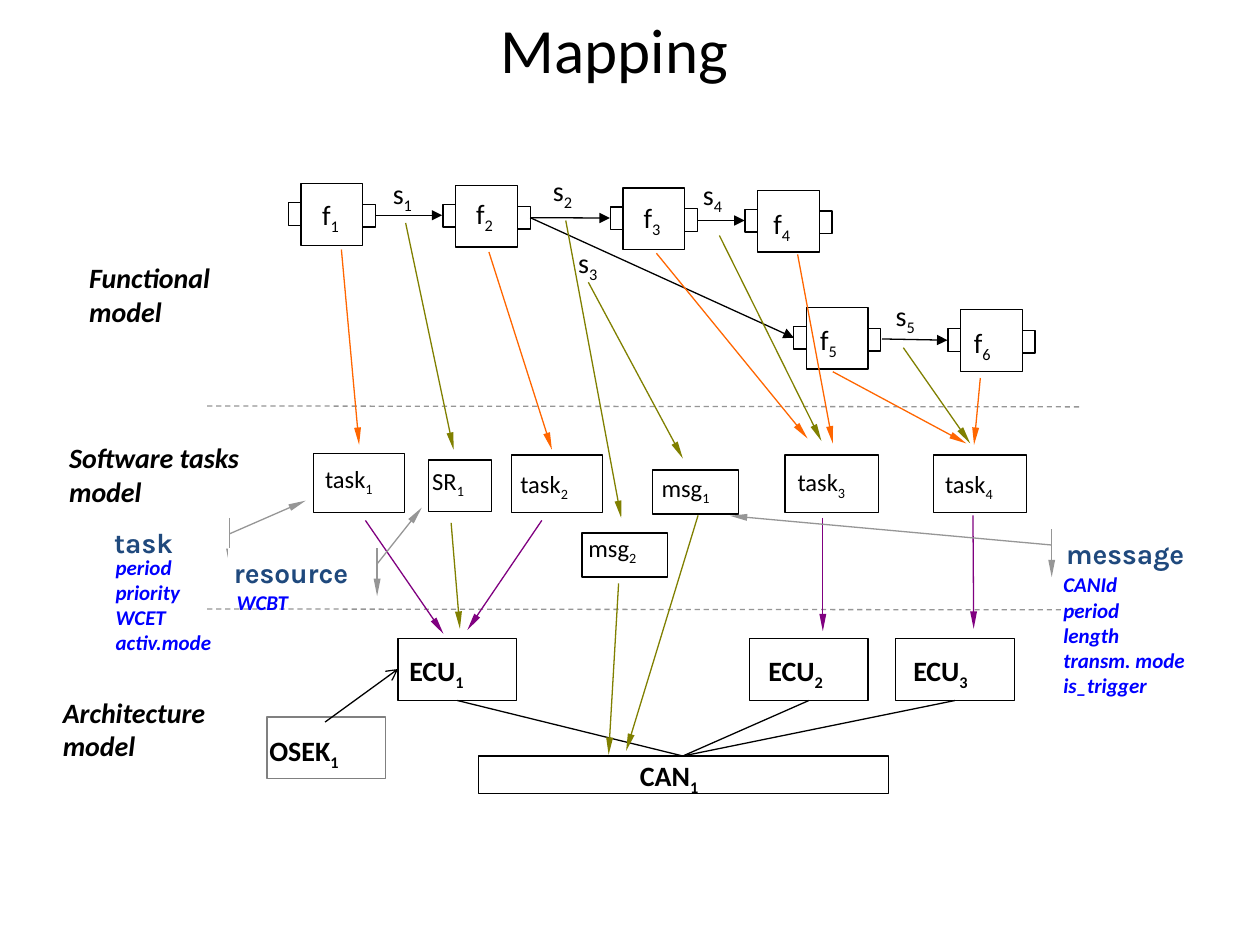
import dataclasses
import typing

import pptx
import pptx.dml.color
import pptx.enum.dml
import pptx.enum.shapes
import pptx.enum.text
import pptx.oxml
import pptx.oxml.ns
import pptx.util

Pt = pptx.util.Pt
Point = tuple[float, float]


class TextStyle(typing.NamedTuple):
    size: float
    color: str = "000000"
    bold: bool = False
    italic: bool = False
    font: str = "Calibri"


@dataclasses.dataclass(frozen=True)
class Theme:
    ink: str = "000000"
    paper: str = "FFFFFF"
    grey: str = "969696"
    os_line: str = "808080"
    function_map: str = "FF6600"
    signal_map: str = "808000"
    task_map: str = "800080"
    stroke: float = 0.75
    title: TextStyle = TextStyle(36)
    function: TextStyle = TextStyle(16)
    task: TextStyle = TextStyle(14)
    unit: TextStyle = TextStyle(16, bold=True)
    layer: TextStyle = TextStyle(16, bold=True, italic=True)
    callout: TextStyle = TextStyle(16, "1F497D", bold=True, font="Karla")
    attribute: TextStyle = TextStyle(12, "0000FF", bold=True, italic=True)


THEME = Theme()
ROOMY = (7.2, 3.6, 7.2, 3.6)
TIGHT = (1.44, 0.72, 1.44, 0.72)


class Node(typing.NamedTuple):
    name: str
    index: str
    left: float
    top: float
    width: float
    height: float
    label: Point
    color: str = THEME.ink


class Signal(typing.NamedTuple):
    index: str
    label: Point
    start: Point
    end: Point


class Note(typing.NamedTuple):
    name: str
    corner: Point
    pointer: tuple[float, float, float, float]
    attributes: tuple[str, ...]
    frame: tuple[float, float, float, float]


BODY, PORT_WIDTH, PORT_HEIGHT = 35.2, 7.3, 13
FUNCTIONS = [Node("f", str(number), left, top, BODY, BODY, label)
             for number, (left, top, label) in enumerate([
                 (172, 105, (177, 109.5)), (260.5, 106, (265, 108.7)),
                 (356, 107.5, (360.7, 110.9)), (433, 108.8, (434.9, 114.5)),
                 (460.8, 175.7, (461.5, 180.7)), (549, 177, (549.4, 182.2))], 1)]
SIGNALS = [
    Signal("1", (217.4, 97.2), (214.6, 123), (252.7, 123)),
    Signal("2", (308.9, 95.8), (303, 124.4), (348.5, 124.6)),
    Signal("3", (323.3, 136.8), (303, 124.4), (453.6, 193)),
    Signal("4", (394.6, 97.9), (399, 126), (425.5, 126)),
    Signal("5", (504.7, 167), (504, 193.7), (541.4, 194.4)),
]
UNITS = [
    Node("ECU", "1", 227.5, 365, 67.7, 35.3, (226.8, 370)),
    Node("ECU", "2", 428.4, 365, 67.7, 35.3, (432, 370)),
    Node("ECU", "3", 511.9, 365, 67.7, 35.3, (514.8, 370)),
    Node("OSEK", "1", 152.6, 409.7, 67.7, 35.3, (146.9, 415.4), THEME.os_line),
    Node("CAN", "1", 273.6, 432, 234, 21.6, (358.6, 429.8)),
]
TASKS = [
    Node("task", "1", 179.3, 259, 52, 34, (184.3, 264.2)),
    Node("task", "2", 292.3, 260, 52, 33, (295.9, 267.1)),
    Node("task", "3", 448.6, 260, 53.3, 33, (454.3, 266.4)),
    Node("task", "4", 533.5, 260, 53.3, 33, (538.6, 267.1)),
    Node("SR", "1", 244.8, 262.8, 36, 29.5, (245.5, 265.7)),
    Node("msg", "1", 373, 268.6, 49, 25.2, (376.6, 269.3)),
    Node("msg", "2", 332.6, 304.6, 49, 25.2, (334.8, 303.8)),
]
MAPPINGS: dict[str, list[tuple[Point, Point]]] = {
    THEME.function_map: [
        ((279.4, 144), (315.4, 257)), ((195.1, 142.6), (205.2, 254.2)),
        ((375.1, 144.7), (461.5, 250.6)), ((455.8, 145.4), (475.9, 253.4)),
        ((475.9, 212.4), (552.2, 253.4)), ((560.2, 216), (556.6, 254.2))],
    THEME.task_map: [
        ((208.8, 297.4), (253.4, 362.2)), ((309.6, 297.4), (267.1, 360)),
        ((470.2, 296), (470.2, 360.7)), ((556, 294.5), (556.4, 359.3))],
    THEME.signal_map: [
        ((231.8, 127.4), (259.2, 257)), ((257.8, 298.8), (262.8, 359.3)),
        ((516.2, 198.7), (554.4, 253.4)), ((411.1, 134.6), (469.4, 252)),
        ((353.5, 333.4), (347.8, 431.3)), ((398.9, 294.5), (357.8, 429.1)),
        ((323.3, 126), (355, 296)), ((336.2, 161.3), (390.2, 262))],
}
LAYERS = [
    ("Functional model", (43.9, 145.4, 103, 39.6)),
    ("Software tasks model", (32.4, 248.4, 131, 43.2)),
    ("Architecture model", (28.8, 393.8, 104.4, 43.2)),
]
NOTES = [
    Note("task", (46, 296), (0.33, 1.076, -0.362, 1.625),
         ("period", "priority", "WCET", "activ.mode"), (59, 313.2, 102, 57)),
    Note("message", (607, 302.4), (0.33, -0.076, -0.28, -2.398),
         ("CANId", "period", "length", "transm. mode", "is_trigger"),
         (600.5, 323.3, 106, 80)),
    Note("resource", (130.3, 313.2), (0.33, 1.076, -0.844, 1.398),
         ("WCBT",), (128.2, 333.4, 102, 18.7)),
]


def rgb(color: str) -> pptx.dml.color.RGBColor:
    return pptx.dml.color.RGBColor.from_string(color)


def add_run(paragraph, text: str, style: TextStyle, subscript: bool = False) -> None:
    run = paragraph.add_run()
    run.text = text
    run.font.name, run.font.size = style.font, Pt(style.size)
    run.font.bold, run.font.italic = style.bold, style.italic
    run.font.color.rgb = rgb(style.color)
    if subscript:
        run._r.get_or_add_rPr().set("baseline", "-25000")


def set_frame(frame, insets: tuple[float, ...]) -> None:
    frame.word_wrap = True
    (frame.margin_left, frame.margin_top,
     frame.margin_right, frame.margin_bottom) = map(Pt, insets)


def add_text(slide, bounds: tuple[float, ...], lines: tuple[str, ...], style: TextStyle,
             index: str = "", insets: tuple[float, ...] = ROOMY):
    frame = slide.shapes.add_textbox(*map(Pt, bounds)).text_frame
    set_frame(frame, insets)
    for number, line in enumerate(lines):
        paragraph = frame.add_paragraph() if number else frame.paragraphs[0]
        add_run(paragraph, line, style)
        if index:
            add_run(paragraph, index, style, subscript=True)
    return frame


def add_outlined(slide, kind, bounds: tuple[float, ...], color: str = THEME.ink):
    shape = slide.shapes.add_shape(kind, *map(Pt, bounds))
    shape.shadow.inherit = False
    shape.fill.solid()
    shape.fill.fore_color.rgb = rgb(THEME.paper)
    shape.line.color.rgb = rgb(color)
    shape.line.width = Pt(THEME.stroke)
    return shape


def add_box(slide, bounds: tuple[float, ...], color: str = THEME.ink) -> None:
    add_outlined(slide, pptx.enum.shapes.MSO_SHAPE.RECTANGLE, bounds, color)


def add_head(shape, head: str, width: str = "med", length: str = "med") -> None:
    outline = shape.element.spPr.find(pptx.oxml.ns.qn("a:ln"))
    outline.append(pptx.oxml.parse_xml(
        f'<a:tailEnd {pptx.oxml.ns.nsdecls("a")} type="{head}" w="{width}" len="{length}"/>'))


def add_line(slide, start: Point, end: Point, color: str = THEME.ink, dashed: bool = False):
    line = slide.shapes.add_connector(
        pptx.enum.shapes.MSO_CONNECTOR.STRAIGHT, *map(Pt, start + end))
    line.line.color.rgb = rgb(color)
    line.line.width = Pt(THEME.stroke)
    if dashed:
        line.line.dash_style = pptx.enum.dml.MSO_LINE.DASH
    line.element.spPr.append(pptx.oxml.parse_xml(
        f'<a:effectLst {pptx.oxml.ns.nsdecls("a")}/>'))
    return line


def add_nodes(slide, nodes: list[Node], style: TextStyle, label_size: Point,
              insets: tuple[float, ...] = ROOMY) -> None:
    for node in nodes:
        add_box(slide, node[2:6], node.color)
        add_text(slide, node.label + label_size, (node.name,), style, node.index, insets)


def add_note(slide, note: Note) -> None:
    callout = add_outlined(slide, pptx.enum.shapes.MSO_SHAPE.LINE_CALLOUT_1_ACCENT_BAR,
                           note.corner + (79.2, 27.4), THEME.grey)
    for position, value in enumerate(note.pointer):
        callout.adjustments[position] = value
    add_head(callout, "triangle", "sm", "lg")
    set_frame(callout.text_frame, (0, 3.6, 7.2, 3.6))
    callout.text_frame.vertical_anchor = pptx.enum.text.MSO_ANCHOR.MIDDLE
    paragraph = callout.text_frame.paragraphs[0]
    paragraph.alignment = pptx.enum.text.PP_ALIGN.CENTER
    add_run(paragraph, note.name, THEME.callout)
    add_text(slide, note.frame, note.attributes, THEME.attribute)


def main() -> None:
    deck = pptx.Presentation()
    deck.slide_width, deck.slide_height = Pt(720), Pt(540)
    slide = deck.slides.add_slide(deck.slide_layouts[6])
    title = add_text(slide, (75.6, 0, 550.8, 54.7), ("Mapping",), THEME.title)
    title.vertical_anchor = pptx.enum.text.MSO_ANCHOR.MIDDLE
    title.paragraphs[0].alignment = pptx.enum.text.PP_ALIGN.CENTER
    for top in (232, 348):
        add_line(slide, (118.4, top), (617.8, top + 0.5), THEME.grey, dashed=True)
    for block in FUNCTIONS:
        for left, drop in ((block.left - PORT_WIDTH, 10.8), (block.left + BODY, 11.8)):
            add_box(slide, (left, block.top + drop, PORT_WIDTH, PORT_HEIGHT))
    add_nodes(slide, FUNCTIONS, THEME.function, (37.4, 25.2))
    for signal in SIGNALS:
        add_head(add_line(slide, signal.start, signal.end), "triangle")
        add_text(slide, signal.label + (37.4, 25.2), ("s",), THEME.function, signal.index)
    add_nodes(slide, UNITS, THEME.unit, (80, 26.6))
    for unit in UNITS[:3]:
        add_line(slide, (unit.left + unit.width / 2, unit.top + unit.height), (390.2, 432))
    add_head(add_line(slide, (185.8, 412.6), (227.5, 382.3)), "arrow")
    add_nodes(slide, TASKS, THEME.task, (50, 24), TIGHT)
    for color, routes in MAPPINGS.items():
        for start, end in routes:
            add_head(add_line(slide, start, end, color), "triangle", "sm", "lg")
    for note in NOTES:
        add_note(slide, note)
    for name, bounds in LAYERS:
        add_text(slide, bounds, (name,), THEME.layer)
    deck.save("out.pptx")


if __name__ == "__main__":
    main()
